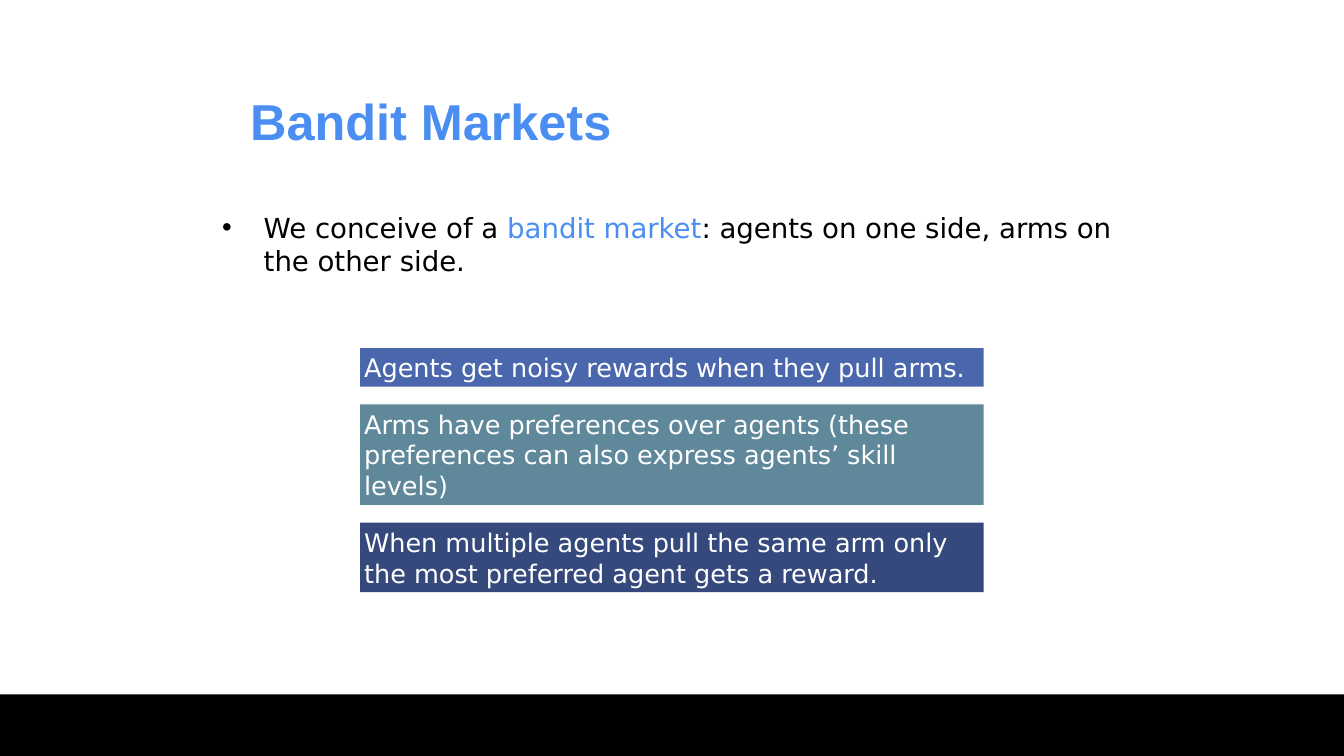
"""Build the Bandit Markets slide: title, bullet and three stacked statements."""
from lxml import etree
from pptx import Presentation
from pptx import util as u
from pptx.dml.color import RGBColor
from pptx.enum import shapes, text
from pptx.oxml import ns

THEME = {
    "accent": "4A8EF2", "ink": "000000", "paper": "FFFFFF",
    "agents": "4A66AC", "arms": "5F889B", "conflict": "35497C",
    "heading": "Arial", "body": "DejaVu Sans",
    "title_size": 27, "bullet_size": 14.8, "card_size": 13.7,
}

deck = Presentation()
deck.slide_width = u.Inches(10)
deck.slide_height = deck.slide_width * 9 // 16
page = deck.slides.add_slide(deck.slide_layouts[6])
column, row = deck.slide_width / 100, deck.slide_height / 100


def add_box(left, top, width, height, fill=None):
    area = [round(v) for v in (left * column, top * row, width * column, height * row)]
    if fill is None:
        box = page.shapes.add_textbox(*area)
    else:
        box = page.shapes.add_shape(shapes.MSO_SHAPE.RECTANGLE, *area)
        box.shadow.inherit = False
        box.fill.solid()
        box.fill.fore_color.rgb = RGBColor.from_string(THEME[fill])
        box.line.fill.background()
    frame = box.text_frame
    frame.word_wrap = True
    frame.vertical_anchor = text.MSO_ANCHOR.MIDDLE
    frame.margin_left = frame.margin_right = u.Inches(0.03)
    frame.margin_top = frame.margin_bottom = u.Inches(0.03)
    return box


def add_span(para, words, size, color, font="body", bold=False):
    span = para.add_run()
    span.text = words
    span.font.name = THEME[font]
    span.font.size = u.Pt(THEME[size])
    span.font.bold = bold
    span.font.color.rgb = RGBColor.from_string(THEME[color])


add_box(0, 91.85, 100, 8.15, "ink")

bullet = add_box(16.23, 27.3, 68, 9.96).text_frame.paragraphs[0]
properties = bullet._p.get_or_add_pPr()
properties.set("marL", str(u.Inches(0.31)))
properties.set("indent", str(u.Inches(-0.31)))
etree.SubElement(properties, ns.qn("a:buFont"), typeface=THEME["heading"])
etree.SubElement(properties, ns.qn("a:buChar"), char="•")
for words, color in [
    ("We conceive of a ", "ink"),
    ("bandit market", "accent"),
    (": agents on one side, arms on the other side.", "ink"),
]:
    add_span(bullet, words, "bullet_size", color)

card_top, card_gap = 46.05, 2.35
for words, fill, height in [
    ("Agents get noisy rewards when they pull arms.", "agents", 5.1),
    ("Arms have preferences over agents (these preferences can also express agents’ skill levels)",
     "arms", 13.3),
    ("When multiple agents pull the same arm only the most preferred agent gets a reward.",
     "conflict", 9.2),
]:
    para = add_box(26.8, card_top, 46.4, height, fill).text_frame.paragraphs[0]
    para.alignment = text.PP_ALIGN.LEFT
    add_span(para, words, "card_size", "paper")
    card_top += height + card_gap

title = add_box(17.63, 11, 29.2, 9.96).text_frame
title.word_wrap = False
title.vertical_anchor = text.MSO_ANCHOR.TOP
title.margin_left = title.margin_right = u.Inches(0.1)
title.margin_top = title.margin_bottom = u.Inches(0.05)
add_span(title.paragraphs[0], "Bandit Markets", "title_size", "accent", "heading", True)

deck.save("out.pptx")
